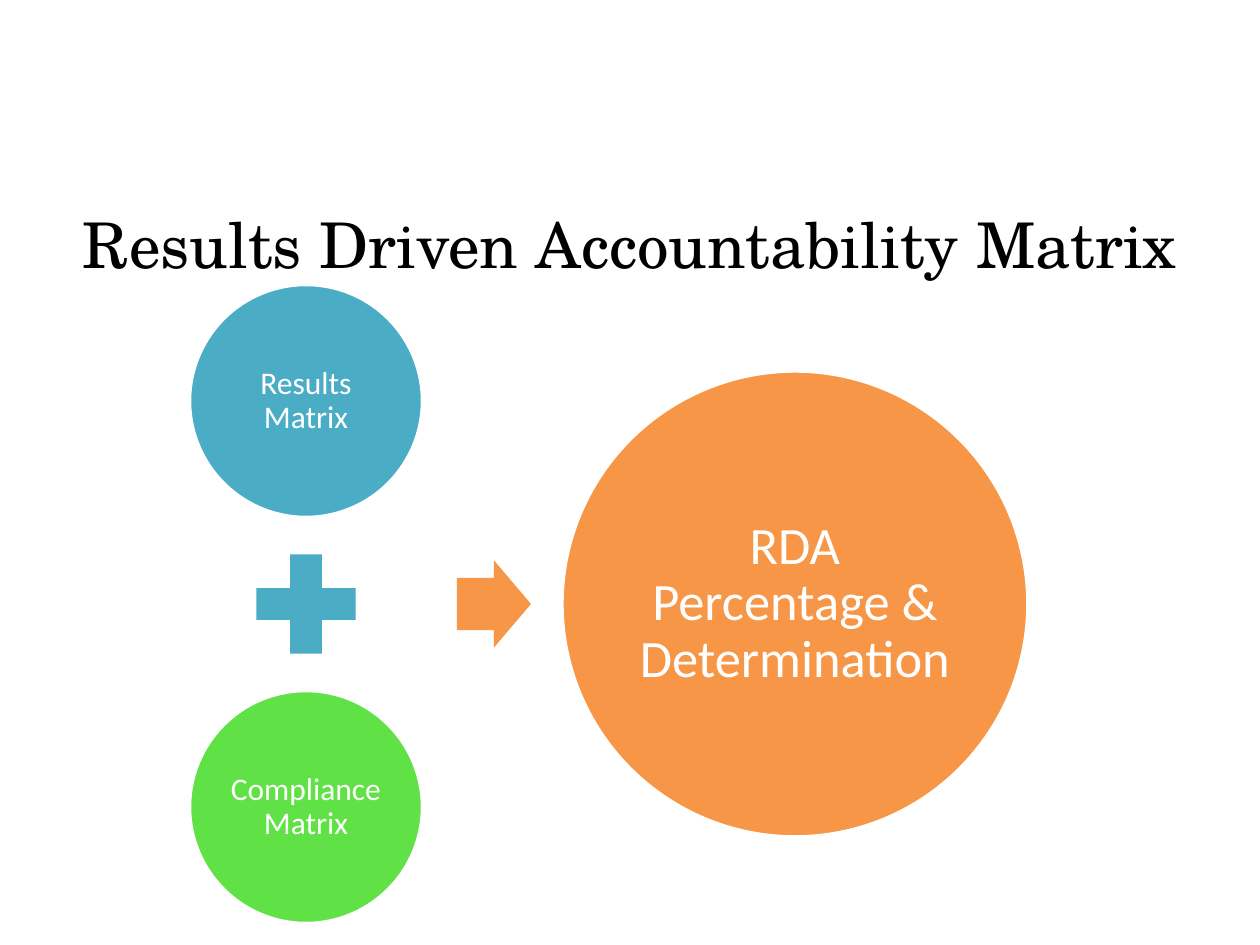
from pptx import Presentation
from pptx import util as u
from pptx.dml.color import RGBColor
from pptx.enum import shapes, text

PX = 914400 / 126  # EMU in one px

BLACK = RGBColor(0x00, 0x00, 0x00)
WHITE = RGBColor(0xFF, 0xFF, 0xFF)
TEAL = RGBColor(0x4B, 0xAC, 0xC6)
GREEN = RGBColor(0x60, 0xE1, 0x46)
ORANGE = RGBColor(0xF7, 0x96, 0x46)


def emu(*lengths):
    return [u.Emu(round(length * PX)) for length in lengths]


class Sketch:
    """Holds the fonts and the current slide; draws each kind of element."""

    title_font = "TeX Gyre Schola"
    body_font = "Calibri"

    def __init__(self, page):
        self.page = page

    def set_words(self, frame, words, size, font, color, anchor, spacing=1.0):
        frame.word_wrap = True
        frame.vertical_anchor = anchor
        para = frame.paragraphs[0]
        para.alignment = text.PP_ALIGN.CENTER
        para.line_spacing = spacing
        span = para.add_run()
        span.text = words
        for name, value in {"name": font, "size": u.Pt(size)}.items():
            setattr(span.font, name, value)
        span.font.color.rgb = color

    def title(self, words, left, top, width, height):
        box = self.page.shapes.add_textbox(*emu(left, top, width, height))
        self.set_words(box.text_frame, words, 36, self.title_font, BLACK,
                       text.MSO_ANCHOR.TOP)

    def symbol(self, kind, center, width, height, fill):
        x, y = center
        shape = self.page.shapes.add_shape(
            kind, *emu(x - width / 2, y - height / 2, width, height))
        shape.shadow.inherit = False
        shape.fill.solid()
        shape.fill.fore_color.rgb = fill
        shape.line.fill.background()
        return shape

    def circle(self, words, center, diameter, fill, size, inset):
        shape = self.symbol(shapes.MSO_SHAPE.OVAL, center, diameter, diameter, fill)
        shape.line.color.rgb = WHITE
        shape.line.width = u.Pt(2)
        frame = shape.text_frame
        for side in ("left", "top", "right", "bottom"):
            setattr(frame, f"margin_{side}", emu(inset)[0])
        self.set_words(frame, words, size, self.body_font, WHITE,
                       text.MSO_ANCHOR.MIDDLE, 0.9)


def main():
    deck = Presentation()
    deck.slide_width, deck.slide_height = emu(1260, 945)
    sketch = Sketch(deck.slides.add_slide(deck.slide_layouts[6]))

    # Title
    sketch.title("Results Driven Accountability Matrix", 63, 199, 1134, 158)

    # Two matrices, added together
    middle, column, step = 604, 306, 203
    sketch.circle("Results Matrix", (column, middle - step), 233, TEAL, 18, 4)
    sketch.symbol(shapes.MSO_SHAPE.MATH_PLUS, (column, middle), 135, 135, TEAL)
    sketch.circle("Compliance Matrix", (column, middle + step), 233, GREEN, 18, 4)

    # Arrow to the outcome
    arrow = sketch.symbol(shapes.MSO_SHAPE.RIGHT_ARROW, (494, middle), 74, 87, ORANGE)
    arrow.adjustments[0] = 0.6
    arrow.adjustments[1] = 0.5
    sketch.circle("RDA Percentage & Determination", (795, middle), 466, ORANGE, 30, 5)

    deck.save("out.pptx")


if __name__ == "__main__":
    main()
